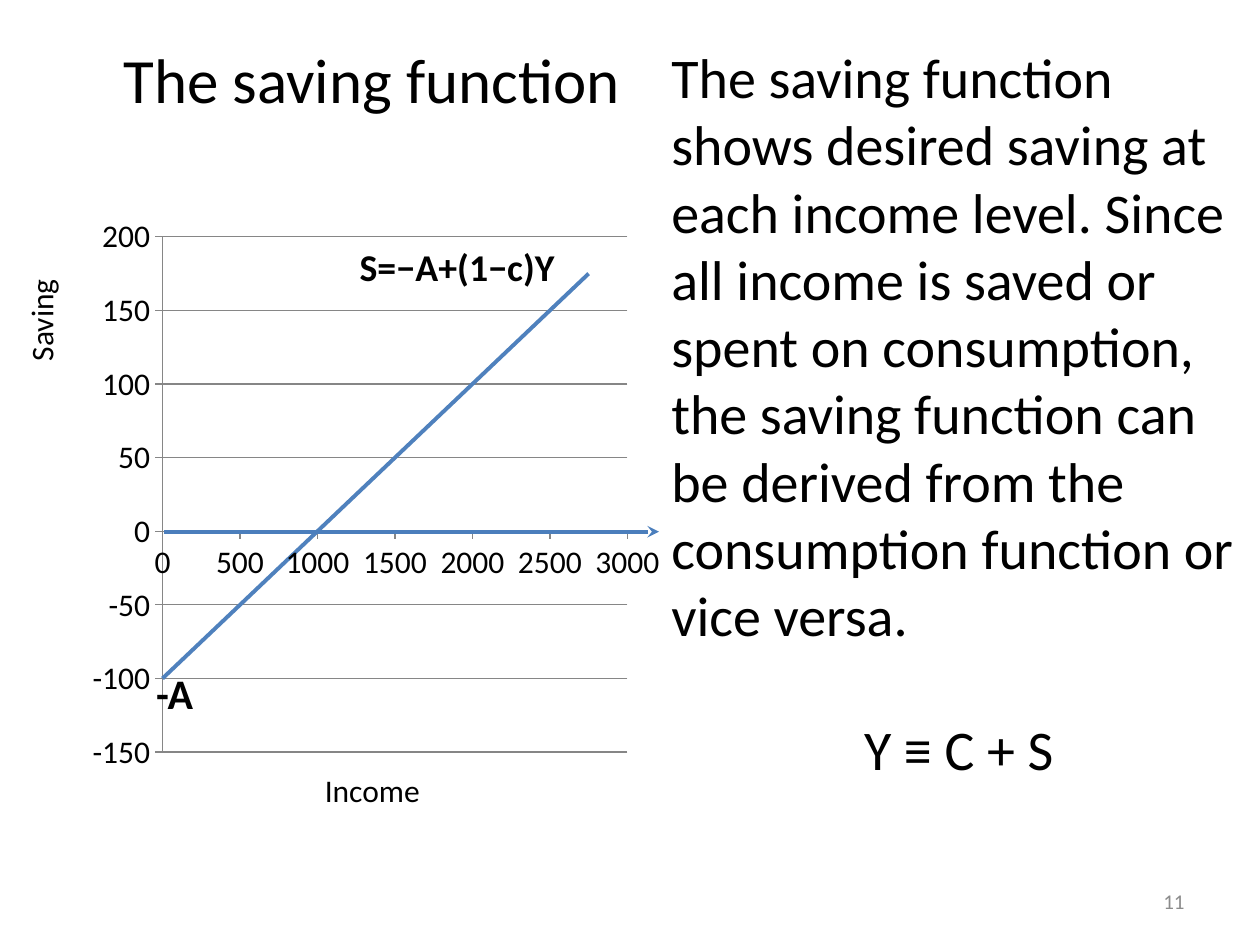
from dataclasses import dataclass

from pptx import Presentation
from pptx.chart.data import XyChartData
from pptx.dml.color import RGBColor
from pptx.enum.chart import XL_CHART_TYPE, XL_TICK_MARK
from pptx.enum.shapes import MSO_CONNECTOR
from pptx.enum.text import MSO_ANCHOR, MSO_AUTO_SIZE, PP_ALIGN
from pptx.oxml.ns import qn
from pptx.oxml.xmlchemy import OxmlElement
from pptx.util import Inches, Pt


@dataclass(frozen=True)
class Theme:
    font: str = "Calibri"
    ink: RGBColor = RGBColor(0x00, 0x00, 0x00)
    muted: RGBColor = RGBColor(0x8C, 0x8C, 0x8C)
    grid: RGBColor = RGBColor(0x86, 0x86, 0x86)
    saving_line: RGBColor = RGBColor(0x4F, 0x81, 0xBD)
    income_arrow: RGBColor = RGBColor(0x4B, 0x7E, 0xBC)
    title: float = 36
    body: float = 32
    intercept: float = 24
    equation: float = 21.6
    label: float = 18
    page: float = 12


THEME = Theme()
CHART_LEFT, CHART_TOP, CHART_WIDTH, CHART_HEIGHT = 0.51, 1.15, 4.88, 5.03
INCOMES = range(0, 3000, 250)
SAVINGS = range(-100, 200, 25)
EXPLANATION = (
    "The saving function shows desired saving at each income level. "
    "Since all income is saved or spent on consumption, the saving function "
    "can be derived from the consumption function or vice versa."
)


def box(left, top, width, height):
    return [Inches(value) for value in (left, top, width, height)]


def style_font(font, size, color=THEME.ink, bold=False):
    font.name = THEME.font
    font.size = Pt(size)
    font.bold = bold
    font.color.rgb = color


def write(frame, text, size, align=PP_ALIGN.LEFT, color=THEME.ink, bold=False):
    frame.word_wrap = True
    frame.text = text
    for paragraph in frame.paragraphs:
        paragraph.alignment = align
        for run in paragraph.runs:
            style_font(run.font, size, color, bold)


def add_label(slide, place, text, size, **style):
    label = slide.shapes.add_textbox(*box(*place))
    write(label.text_frame, text, size, **style)
    return label


def add_title(slide, text):
    title = slide.shapes.title
    title.left, title.top, title.width, title.height = box(
        CHART_LEFT, 0, CHART_WIDTH, 1.25)
    title.text_frame.vertical_anchor = MSO_ANCHOR.MIDDLE
    write(title.text_frame, text, THEME.title, PP_ALIGN.CENTER)


def set_layout(parent, position, inner=False, **inches):
    """Place a chart part by x, y, w and h in inches from the chart's corner."""
    layout = parent.find(qn("c:layout"))
    if layout is None:
        layout = OxmlElement("c:layout")
        parent.insert(position, layout)
    manual = OxmlElement("c:manualLayout")
    layout.append(manual)
    settings = {"layoutTarget": "inner"} if inner else {}
    settings.update(xMode="edge", yMode="edge")
    for side, length in inches.items():
        settings[side] = length / (CHART_WIDTH if side in "xw" else CHART_HEIGHT)
    for tag, value in settings.items():
        setting = OxmlElement(f"c:{tag}")
        setting.set("val", str(value))
        manual.append(setting)


def format_axis(axis, gridlines):
    axis.major_tick_mark = XL_TICK_MARK.OUTSIDE
    axis.minor_tick_mark = XL_TICK_MARK.NONE
    axis.has_major_gridlines = gridlines
    lines = [axis.format.line]
    if gridlines:
        lines.append(axis.major_gridlines.format.line)
    for line in lines:
        line.color.rgb = THEME.grid
        line.width = Pt(0.75)
    style_font(axis.tick_labels.font, THEME.label)
    axis.tick_labels.number_format = "General"
    axis.tick_labels.number_format_is_linked = False


def add_saving_chart(slide):
    data = XyChartData()
    points = data.add_series("Series 1")
    for income, saving in zip(INCOMES, SAVINGS):
        points.add_data_point(income, saving)
    chart = slide.shapes.add_chart(
        XL_CHART_TYPE.XY_SCATTER_LINES_NO_MARKERS,
        *box(CHART_LEFT, CHART_TOP, CHART_WIDTH, CHART_HEIGHT), data).chart
    style_font(chart.font, THEME.label)
    chart.has_legend = False

    chart.has_title = True
    equation = chart.chart_title
    write(equation.text_frame, "S=−A+(1−c)Y", THEME.equation,
          PP_ALIGN.CENTER, bold=True)
    equation.include_in_layout = True
    set_layout(equation._element, 1, x=2.29, y=0.7)

    plot_area = chart._chartSpace.find(".//" + qn("c:plotArea"))
    set_layout(plot_area, 0, inner=True, x=0.78, y=0.73, w=3.69, h=4.09)
    format_axis(chart.category_axis, gridlines=False)
    format_axis(chart.value_axis, gridlines=True)

    chart.plots[0].vary_by_categories = False
    line = chart.plots[0].series[0]
    line.smooth = False
    line.format.line.color.rgb = THEME.saving_line
    line.format.line.width = Pt(2.25)


def add_arrow(slide, tip, start):
    arrow = slide.shapes.add_connector(
        MSO_CONNECTOR.STRAIGHT, *box(*tip, *start))
    arrow.line.color.rgb = THEME.income_arrow
    arrow.line.width = Pt(2.25)
    head = OxmlElement("a:headEnd")
    head.set("type", "stealth")
    arrow.line._get_or_add_ln().append(head)
    arrow._element.spPr.append(OxmlElement("a:effectLst"))


def add_explanation(slide):
    explanation = add_label(
        slide, (5.23, 0.29, 4.76, 6.02),
        f"{EXPLANATION}\nY ≡ C + S", THEME.body)
    explanation.text_frame.auto_size = MSO_AUTO_SIZE.SHAPE_TO_FIT_TEXT
    identity = explanation.text_frame.paragraphs[1]
    identity.alignment = PP_ALIGN.CENTER
    identity.space_before = Pt(38.4)


def main():
    presentation = Presentation()
    presentation.slide_width, presentation.slide_height = Inches(10), Inches(7.5)
    slide = presentation.slides.add_slide(presentation.slide_layouts[5])

    add_title(slide, "The saving function")
    add_saving_chart(slide)
    page = add_label(slide, (7.17, 6.95, 2.33, 0.4), "11", THEME.page,
                     align=PP_ALIGN.RIGHT, color=THEME.muted)
    page.text_frame.vertical_anchor = MSO_ANCHOR.MIDDLE
    add_explanation(slide)
    add_label(slide, (2.48, 6.07, 2.13, 0.4), "Income", THEME.label)
    saving_label = add_label(
        slide, (-0.27, 2.17, 1.19, 0.4), "Saving", THEME.label)
    saving_label.rotation = 270
    add_arrow(slide, tip=(5.23, 4.22), start=(1.3, 4.22))
    add_label(slide, (1.14, 5.25, 0.63, 0.5), "-A", THEME.intercept, bold=True)

    presentation.save("out.pptx")


if __name__ == "__main__":
    main()
